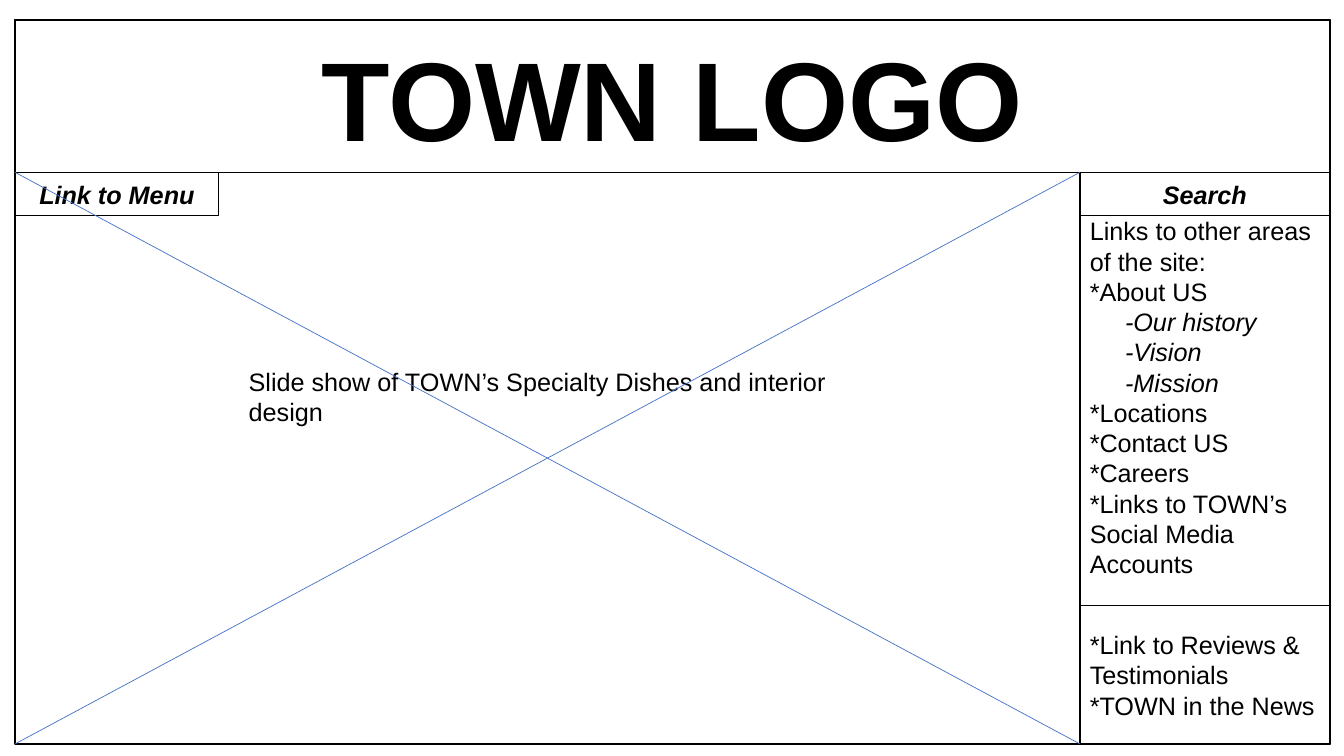
from pptx import Presentation
from pptx.dml.color import RGBColor
from pptx.enum.shapes import MSO_CONNECTOR, MSO_SHAPE
from pptx.enum.text import MSO_ANCHOR, PP_ALIGN
from pptx.oxml import parse_xml
from pptx.oxml.ns import nsdecls
from pptx.util import Inches, Pt

BLACK, WHITE, BLUE = "000000", "FFFFFF", "4472C4"

# Page grid: column and row edges in inches
LEFT, SIDE, RIGHT = 0.15, 10.71, 13.19
TOP, BODY, LINKS, NEWS, BASE = 0.2, 1.71, 2.14, 6.01, 7.38

SITE = ["Links to other areas of the site:", "*About US", "-Our history",
        "-Vision", "-Mission", "*Locations", "*Contact US", "*Careers",
        "*Links to TOWN’s Social Media Accounts"]
PRESS = ["*Link to Reviews & Testimonials", "*TOWN in the News"]


def color(code):
    return RGBColor.from_string(code)


def write(shape, lines, size=18, bold=False, italic=False, align=PP_ALIGN.LEFT):
    frame = shape.text_frame
    frame.word_wrap = True
    frame.text = "\n".join(lines)
    for para in frame.paragraphs:
        para.alignment = align
        sub = para.text.startswith("-")
        if sub:
            para._p.get_or_add_pPr().set("marL", str(Inches(0.35)))
        font = para.runs[0].font
        font.name, font.size, font.bold = "Arial", Pt(size), bold
        font.italic = italic or sub
        font.color.rgb = color(BLACK)


def panel(slide, x, y, right, base, fill=None):
    box = slide.shapes.add_shape(MSO_SHAPE.RECTANGLE, Inches(x), Inches(y),
                                 Inches(right - x), Inches(base - y))
    box.shadow.inherit = False
    if fill:
        box.fill.solid()
        box.fill.fore_color.rgb = color(fill)
    else:
        box.fill.background()
    box.line.color.rgb = color(BLACK)
    box.line.width = Pt(1)
    box.text_frame.vertical_anchor = MSO_ANCHOR.MIDDLE
    return box


def button(slide, x, y, right, base, label):
    box = panel(slide, x, y, right, base)
    write(box, [label], bold=True, italic=True, align=PP_ALIGN.CENTER)


def header(slide, x, y, right, base):
    box = panel(slide, x, y, right, base, WHITE)
    write(box, ["TOWN LOGO"], size=80, bold=True, align=PP_ALIGN.CENTER)


def sidebar(slide, x, y, right, base):
    links = panel(slide, x, LINKS, right, NEWS, WHITE)
    write(links, SITE)
    links.text_frame.vertical_anchor = MSO_ANCHOR.TOP
    links.text_frame.margin_top = 0
    write(panel(slide, x, NEWS, right, base, WHITE), PRESS)
    button(slide, x, y, right, LINKS, "Search")


def show(slide, x, y, right, base):
    wide, high = right - x, base - y
    note = slide.shapes.add_textbox(
        Inches(x + 0.21 * wide), Inches(y + 0.33 * high),
        Inches(0.6 * wide), Inches(0.4))
    write(note, ["Slide show of TOWN’s Specialty Dishes and interior design"])
    button(slide, x, y, x + 2.02, LINKS, "Link to Menu")
    # Crossed diagonals mark the image area
    for start, end in ((x, right), (right, x)):
        line = slide.shapes.add_connector(
            MSO_CONNECTOR.STRAIGHT, Inches(start), Inches(y),
            Inches(end), Inches(base))
        line.line.color.rgb = color(BLUE)
        line.line.width = Pt(0.5)
        line._element.spPr.append(parse_xml(f"<a:effectLst {nsdecls('a')}/>"))


def main():
    deck = Presentation()
    deck.slide_width, deck.slide_height = Inches(13.33), Inches(7.5)
    slide = deck.slides.add_slide(deck.slide_layouts[6])
    panel(slide, LEFT, TOP, RIGHT, BASE)
    header(slide, LEFT, TOP, RIGHT, BODY)
    sidebar(slide, SIDE, BODY, RIGHT, BASE)
    show(slide, LEFT, BODY, SIDE, BASE)
    deck.save("out.pptx")


if __name__ == "__main__":
    main()
